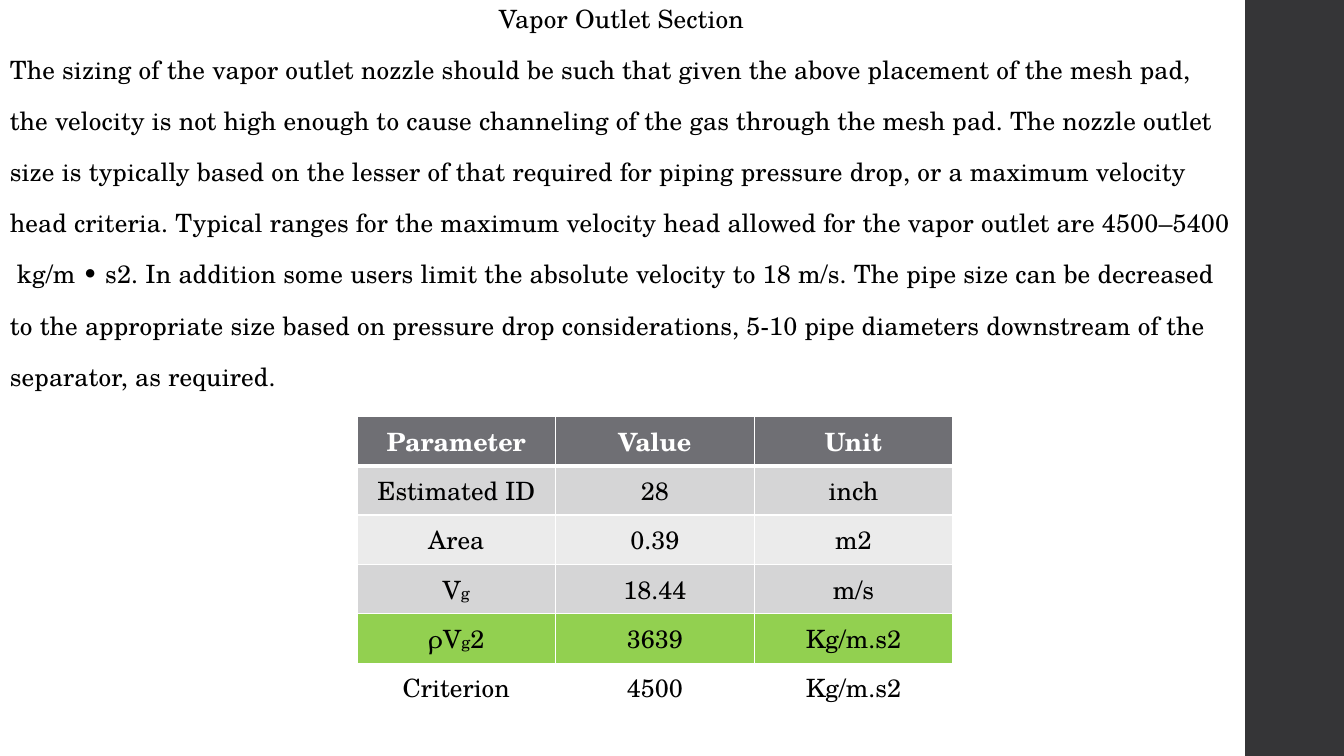
from lxml.etree import SubElement
from pptx import Presentation
from pptx.dml.color import RGBColor
from pptx.enum.shapes import MSO_SHAPE
from pptx.enum.text import MSO_ANCHOR, MSO_AUTO_SIZE, PP_ALIGN
from pptx.oxml.ns import qn
from pptx.util import Inches, Pt

FONT = "TeX Gyre Schola"
BLACK = RGBColor(0x00, 0x00, 0x00)
WHITE = RGBColor(0xFF, 0xFF, 0xFF)
CHARCOAL = RGBColor(0x35, 0x35, 0x37)
HEADER_GREY = RGBColor(0x6F, 0x6F, 0x74)
DARK_BAND = RGBColor(0xD5, 0xD5, 0xD6)
LIGHT_BAND = RGBColor(0xEB, 0xEB, 0xEB)
GREEN = RGBColor(0x92, 0xD0, 0x50)

HEADING = "Vapor Outlet Section"
GUIDANCE = [
    "The sizing of the vapor outlet nozzle should be such that given the above placement of the mesh pad,",
    "the velocity is not high enough to cause channeling of the gas through the mesh pad. The nozzle outlet",
    "size is typically based on the lesser of that required for piping pressure drop, or a maximum velocity",
    "head criteria. Typical ranges for the maximum velocity head allowed for the vapor outlet are 4500–5400",
    " kg/m • s2. In addition some users limit the absolute velocity to 18 m/s. The pipe size can be decreased",
    "to the appropriate size based on pressure drop considerations, 5-10 pipe diameters downstream of the",
    "separator, as required.",
]
NOZZLE_ROWS = [
    (HEADER_GREY, ["Parameter"], ["Value"], ["Unit"]),
    (DARK_BAND, ["Estimated ID"], ["28"], ["inch"]),
    (LIGHT_BAND, ["Area"], ["0.39"], ["m2"]),
    (DARK_BAND, ["V", "g"], ["18.44"], ["m/s"]),
    (GREEN, ["ρV", "g", "2"], ["3639"], ["Kg/m.s2"]),
    (WHITE, ["Criterion"], ["4500"], ["Kg/m.s2"]),
]


def add_text(paragraph, text, color=BLACK, size=18, bold=False):
    run = paragraph.add_run()
    run.text = text
    run.font.name = FONT
    run.font.size = Pt(size)
    run.font.bold = bold
    run.font.color.rgb = color
    return run


def add_border(cell, side, width):
    line = SubElement(cell._tc.get_or_add_tcPr(), qn(f"a:{side}"), w=str(Pt(width)))
    fill = SubElement(line, qn("a:solidFill"))
    SubElement(fill, qn("a:srgbClr"), val=str(WHITE))


deck = Presentation()
deck.slide_width, deck.slide_height = Inches(13.33), Inches(7.5)
slide = deck.slides.add_slide(deck.slide_layouts[5])
text_width, heading_height = Inches(12.33), Inches(0.51)

sidebar_left = Inches(12.35)
sidebar = slide.shapes.add_shape(
    MSO_SHAPE.RECTANGLE, sidebar_left, 0, deck.slide_width - sidebar_left, deck.slide_height)
sidebar.shadow.inherit = False
sidebar.fill.solid()
sidebar.fill.fore_color.rgb = CHARCOAL
sidebar.line.fill.background()

heading = slide.shapes.title
heading.left, heading.top, heading.width, heading.height = 0, 0, text_width, heading_height
guidance = slide.shapes.add_textbox(0, heading_height, text_width, Inches(3.5))

for block, lines, alignment in (
    (heading, [HEADING], PP_ALIGN.CENTER),
    (guidance, GUIDANCE, PP_ALIGN.LEFT),
):
    frame = block.text_frame
    frame.word_wrap = True
    frame.auto_size = MSO_AUTO_SIZE.NONE
    frame.vertical_anchor = MSO_ANCHOR.TOP
    for index, text in enumerate(lines):
        paragraph = frame.add_paragraph() if index else frame.paragraphs[0]
        paragraph.alignment = alignment
        paragraph.line_spacing = 0.95
        paragraph.space_before = Pt(14 if index else 0)
        paragraph.space_after = Pt(2)
        run = add_text(paragraph, text)
        run.font._element.set("spc", "10")

column_width, row_height = Inches(1.97), Inches(0.49)
nozzle_table = slide.shapes.add_table(
    len(NOZZLE_ROWS), 3, Inches(3.54), Inches(4.13),
    column_width * 3, row_height * len(NOZZLE_ROWS)).table

for row, (band, *entries) in enumerate(NOZZLE_ROWS):
    is_header = row == 0
    for column, pieces in enumerate(entries):
        cell = nozzle_table.cell(row, column)
        cell.vertical_anchor = MSO_ANCHOR.MIDDLE
        for side in ("lnL", "lnR", "lnT", "lnB"):
            thick = (is_header and side == "lnB") or (row == 1 and side == "lnT")
            add_border(cell, side, 3 if thick else 1)
        cell.fill.solid()
        cell.fill.fore_color.rgb = band
        paragraph = cell.text_frame.paragraphs[0]
        paragraph.alignment = PP_ALIGN.CENTER
        for piece in pieces:
            add_text(paragraph, piece, WHITE if is_header else BLACK,
                     12 if piece == "g" else 18, is_header)

deck.save("out.pptx")
